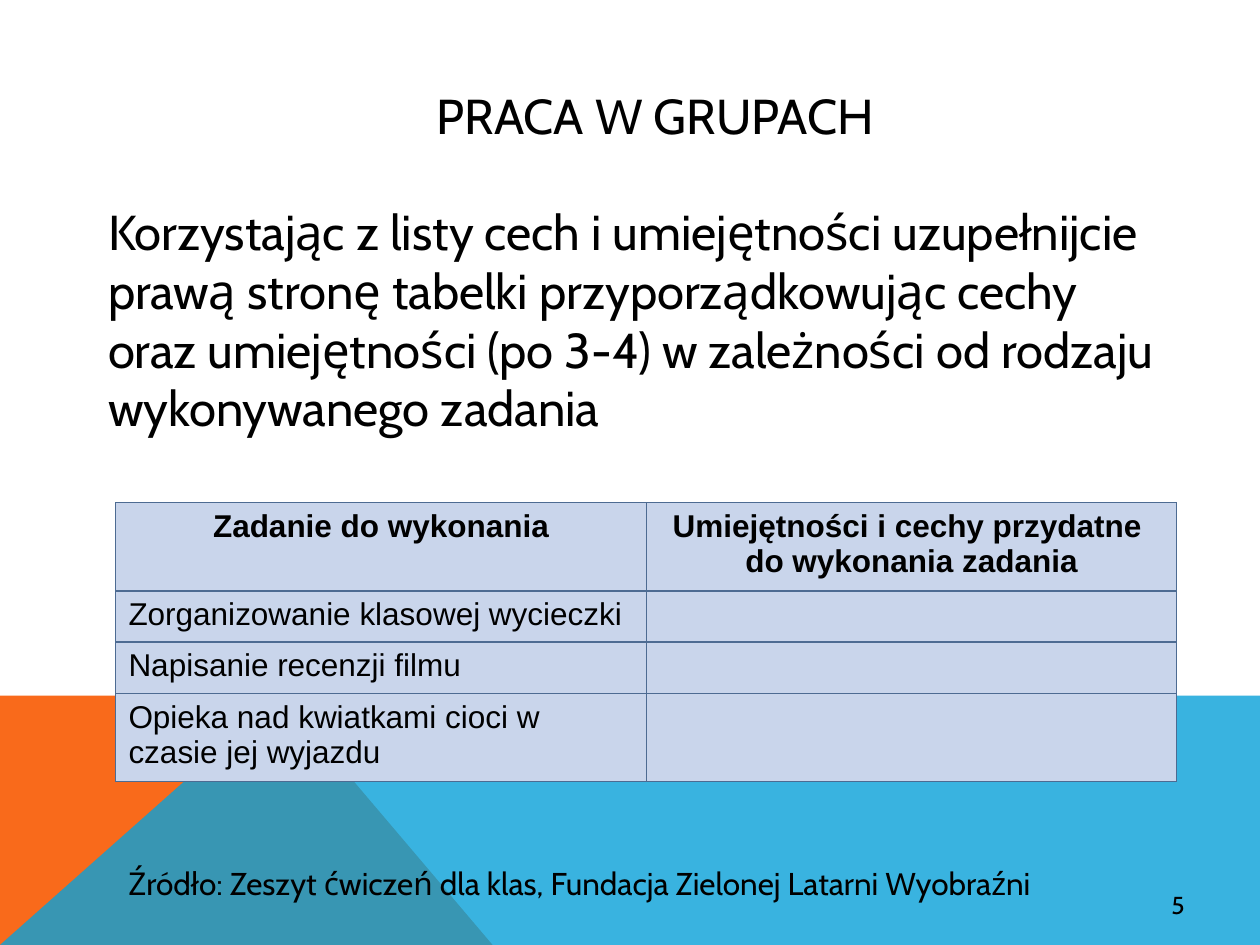
from lxml.etree import SubElement as Sub
from pptx import Presentation
from pptx.dml.color import RGBColor
from pptx.enum.text import MSO_ANCHOR as Anchor, PP_ALIGN as Align
from pptx.oxml.ns import qn
from pptx.util import Inches, Pt

BLACK = RGBColor(0x00, 0x00, 0x00)
ORANGE = RGBColor(0xF9, 0x6A, 0x1B)
BLUE = RGBColor(0x08, 0xA1, 0xD9)
PALE = RGBColor(0xC9, 0xD5, 0xEB)
EDGE = RGBColor(0x4D, 0x6B, 0x92)

HEADS = ["Zadanie do wykonania", "Umiejętności i cechy przydatne \ndo wykonania zadania"]
TASKS = [
    "Zorganizowanie klasowej wycieczki",
    "Napisanie recenzji filmu",
    "Opieka nad kwiatkami cioci w czasie jej wyjazdu",
]
BRIEF = (
    "Korzystając z listy cech i umiejętności uzupełnijcie prawą stronę tabelki "
    "przyporządkowując cechy \noraz umiejętności (po 3-4) w zależności od rodzaju "
    "wykonywanego zadania"
)
SOURCE = "Źródło: Zeszyt ćwiczeń dla klas, Fundacja Zielonej Latarni Wyobraźni"


def write(frame, text, size=18, font="Cabin", bold=False, align=Align.LEFT, anchor=Anchor.TOP):
    """Put formatted text into a text frame."""
    frame.word_wrap = True
    frame.vertical_anchor = anchor
    para = frame.paragraphs[0]
    para.text = text.replace("\n", "\v")
    para.alignment = align
    for run in para.runs:
        run.font.name = font
        run.font.size = Pt(size)
        run.font.bold = bold
        run.font.color.rgb = BLACK


def add_text(slide, box, text, **style):
    """Add a text box at the given place in inches."""
    shape = slide.shapes.add_textbox(*map(Inches, box))
    write(shape.text_frame, text, **style)


def add_area(slide, points, color, alpha=100):
    """Add a closed, filled outline without a line."""
    first, *rest = [(Inches(x), Inches(y)) for x, y in points]
    form = slide.shapes.build_freeform(*first)
    form.add_line_segments(rest, close=True)
    shape = form.convert_to_shape()
    shape.shadow.inherit = False
    shape.line.fill.background()
    shape.fill.solid()
    shape.fill.fore_color.rgb = color
    if alpha < 100:
        tint = shape._element.spPr.find(qn("a:solidFill"))[0]
        Sub(tint, qn("a:alpha"), val=str(alpha * 1000))


def add_edges(cell):
    """Draw thin borders on all sides of a cell."""
    props = cell._tc.get_or_add_tcPr()
    for spot, side in enumerate(("lnL", "lnR", "lnT", "lnB")):
        line = Sub(props, qn("a:" + side), w=str(Pt(0.75)))
        fill = Sub(line, qn("a:solidFill"))
        Sub(fill, qn("a:srgbClr"), val=str(EDGE))
        props.insert(spot, line)


def add_grid(slide, box, rows, heights):
    """Add the task table with a bold, centred first row."""
    shape = slide.shapes.add_table(len(rows), len(rows[0]), *map(Inches, box))
    table = shape.table
    table.horz_banding = False
    for r, row in enumerate(rows):
        table.rows[r].height = Inches(heights[r])
        head = r == 0
        for c, text in enumerate(row):
            cell = table.cell(r, c)
            cell.fill.solid()
            cell.fill.fore_color.rgb = PALE
            add_edges(cell)
            write(cell.text_frame, text, font="Arial", bold=head,
                  align=Align.CENTER if head else Align.LEFT)


def add_title(slide, box, text):
    """Place and fill the title placeholder."""
    title = slide.shapes.title
    title.left, title.top, title.width, title.height = map(Inches, box)
    write(title.text_frame, text, size=28, align=Align.CENTER, anchor=Anchor.MIDDLE)


def main():
    """Build the slide and save it."""
    deck = Presentation()
    deck.slide_width, deck.slide_height = Inches(10), Inches(7.5)
    slide = deck.slides.add_slide(deck.slide_layouts[5])
    add_area(slide, [(0, 7.5), (0, 5.52), (2.23, 5.52), (3.91, 7.5)], ORANGE)
    add_area(slide, [(0, 7.5), (2.23, 5.52), (10, 5.52), (10, 7.5)], BLUE, alpha=80)
    add_title(slide, (1.61, 0.29, 7.18, 1.25), "PRACA W GRUPACH")
    rows = [HEADS] + [[task, ""] for task in TASKS]
    add_grid(slide, (0.92, 3.99, 8.42, 2.2), rows, [0.7, 0.4, 0.4, 0.7])
    add_text(slide, (7.17, 6.83, 2.33, 0.52), "5", size=14, align=Align.RIGHT, anchor=Anchor.BOTTOM)
    add_text(slide, (0.76, 1.55, 8.9, 1.97), BRIEF, size=28)
    add_text(slide, (0.92, 6.81, 8.58, 0.4), SOURCE)
    deck.save("out.pptx")


if __name__ == "__main__":
    main()
